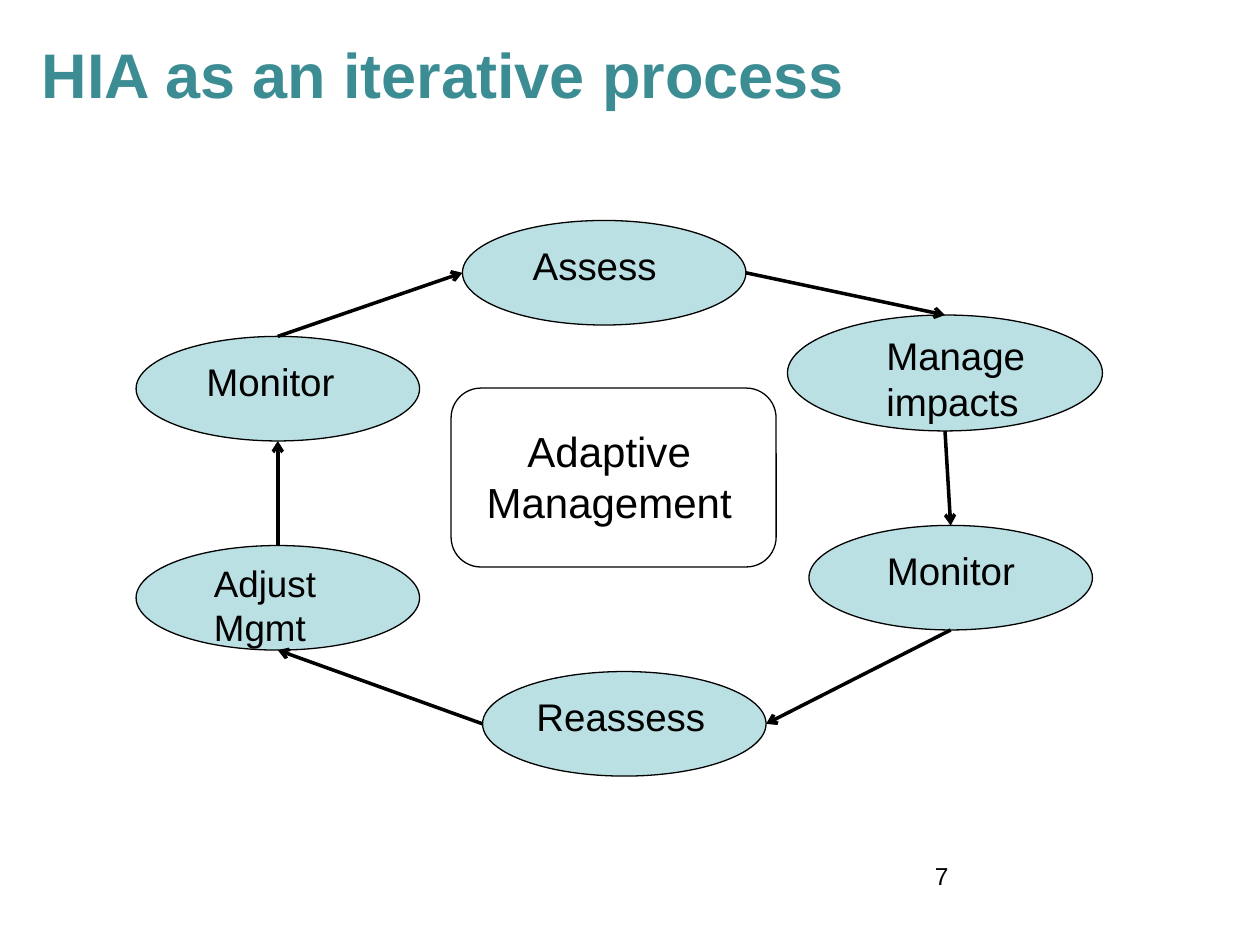
import pptx
import pptx.dml.color
import pptx.enum.shapes
import pptx.enum.text
import pptx.oxml.ns
import pptx.util
import lxml.etree

Inches = pptx.util.Inches
Pt = pptx.util.Pt
ALIGN = pptx.enum.text.PP_ALIGN
ANCHOR = pptx.enum.text.MSO_ANCHOR
SHAPE = pptx.enum.shapes.MSO_SHAPE

TEAL = pptx.dml.color.RGBColor(0x3C, 0x8C, 0x93)
PALE_TEAL = pptx.dml.color.RGBColor(0xBB, 0xE0, 0xE3)
BLACK = pptx.dml.color.RGBColor(0, 0, 0)

SIDES = {"top": (0.5, 0), "bottom": (0.5, 1), "left": (0, 0.5), "right": (1, 0.5)}

STAGES = {
    "assess": ("Assess", 2.59, 0, 2.25, 0.83, 0.13, 22, 0.05),
    "manage": ("Manage impacts", 5.17, 0.75, 2.5, 0.92, 0.32, 22, 0),
    "monitor_impacts": ("Monitor", 5.34, 2.42, 2.25, 0.83, 0.19, 22, 0.05),
    "reassess": ("Reassess", 2.75, 3.58, 2.25, 0.83, 0, 22, 0.05),
    "adjust": ("Adjust Mgmt", 0, 2.58, 2.25, 0.83, 0.19, 21, 0),
    "monitor_changes": ("Monitor", 0, 0.92, 2.25, 0.83, 0.13, 22, 0.05),
}

STEPS = [
    ("assess", "right", "manage", "top"),
    ("manage", "bottom", "monitor_impacts", "top"),
    ("monitor_impacts", "bottom", "reassess", "right"),
    ("reassess", "left", "adjust", "bottom"),
    ("adjust", "top", "monitor_changes", "bottom"),
    ("monitor_changes", "top", "assess", "left"),
]


def write(frame, text, size, color=BLACK, bold=False, align=ALIGN.LEFT,
          anchor=ANCHOR.TOP, insets=(0, 0, 0, 0)):
    frame.word_wrap = True
    frame.auto_size = pptx.enum.text.MSO_AUTO_SIZE.NONE
    frame.vertical_anchor = anchor
    (frame.margin_left, frame.margin_top,
     frame.margin_right, frame.margin_bottom) = map(Inches, insets)
    paragraph = frame.paragraphs[0]
    paragraph.alignment = align
    run = paragraph.add_run()
    run.text = text
    run.font.name = "Arial"
    run.font.size = Pt(size)
    run.font.bold = bold
    run.font.color.rgb = color
    return paragraph


def add_outlined(slide, preset, left, top, width, height):
    outlined = slide.shapes.add_shape(
        preset, Inches(left), Inches(top), Inches(width), Inches(height))
    outlined.shadow.inherit = False
    outlined.line.color.rgb = BLACK
    outlined.line.width = Pt(0.75)
    return outlined


def add_heading(slide, left, top, width, height):
    heading = slide.shapes.title
    heading.left, heading.top = Inches(left), Inches(top)
    heading.width, heading.height = Inches(width), Inches(height)
    write(heading.text_frame, "HIA as an iterative process", 36, TEAL,
          bold=True, anchor=ANCHOR.MIDDLE)


def add_stage(slide, left, top, width, height, label, indent, size, top_inset):
    stage = add_outlined(slide, SHAPE.OVAL, left, top, width, height)
    stage.fill.solid()
    stage.fill.fore_color.rgb = PALE_TEAL
    paragraph = write(stage.text_frame, label, size,
                      insets=(0.1, top_inset, 0.1, 0.05))
    properties = paragraph._p.get_or_add_pPr()
    properties.set("marL", str(Inches(indent)))
    properties.set("indent", "0")
    return stage


def side_point(stage, side):
    across, down = SIDES[side]
    return (int(stage.left + across * stage.width),
            int(stage.top + down * stage.height))


def add_arrow(slide, start, end):
    arrow = slide.shapes.add_connector(
        pptx.enum.shapes.MSO_CONNECTOR.STRAIGHT, *start, *end)
    arrow.line.color.rgb = BLACK
    arrow.line.width = Pt(2)
    qn = pptx.oxml.ns.qn
    lxml.etree.SubElement(arrow.line._get_or_add_ln(), qn("a:tailEnd"), type="arrow")
    lxml.etree.SubElement(arrow._element.spPr, qn("a:effectLst"))


def add_cycle(slide, left, top):
    stages = {}
    for key, (label, x, y, width, height, indent, size, inset) in STAGES.items():
        stages[key] = add_stage(slide, left + x, top + y, width, height,
                                label, indent, size, inset)
    for source, source_side, target, target_side in STEPS:
        add_arrow(slide, side_point(stages[source], source_side),
                  side_point(stages[target], target_side))


def add_core(slide, left, top, width, height):
    core = add_outlined(slide, SHAPE.ROUNDED_RECTANGLE, left, top, width, height)
    core.fill.background()
    caption = slide.shapes.add_textbox(
        Inches(left + 0.17), Inches(top + 0.25), Inches(2.17), Inches(0.91))
    write(caption.text_frame, "Adaptive Management", 24, align=ALIGN.CENTER,
          insets=(0.1, 0.05, 0.1, 0.05))


def add_page_number(slide, left, top, width, height):
    page_number = slide.shapes.add_textbox(
        Inches(left), Inches(top), Inches(width), Inches(height))
    write(page_number.text_frame, "7", 14)


def main():
    deck = pptx.Presentation()
    deck.slide_width, deck.slide_height = Inches(10), Inches(7.5)
    slide = deck.slides.add_slide(deck.slide_layouts[5])
    add_page_number(slide, 7.42, 6.83, 2.08, 0.5)
    add_heading(slide, 0.33, 0.25, 9.33, 0.67)
    add_cycle(slide, 1.08, 1.75)
    add_core(slide, 3.58, 3.08, 2.58, 1.42)
    deck.save("out.pptx")


if __name__ == "__main__":
    main()
